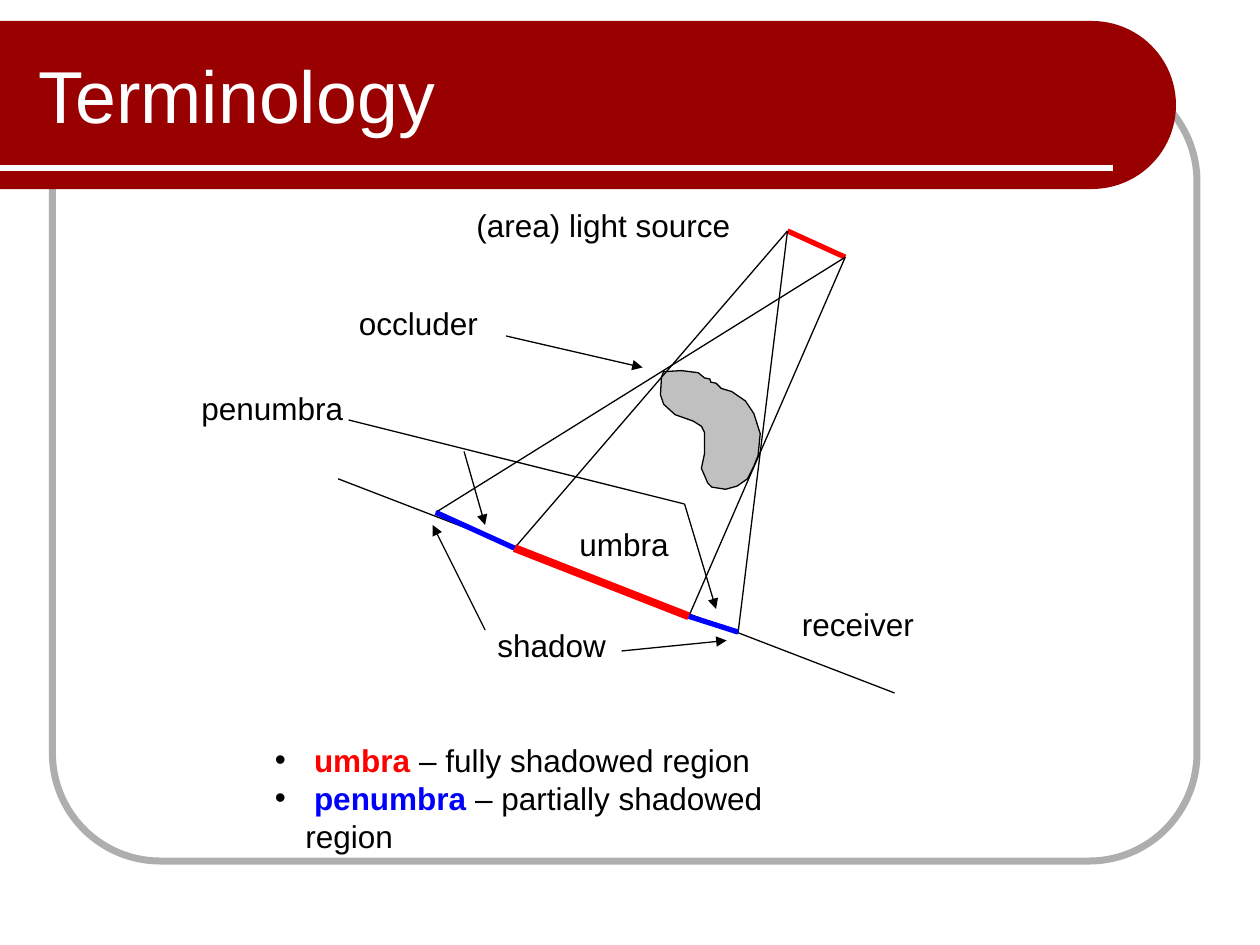
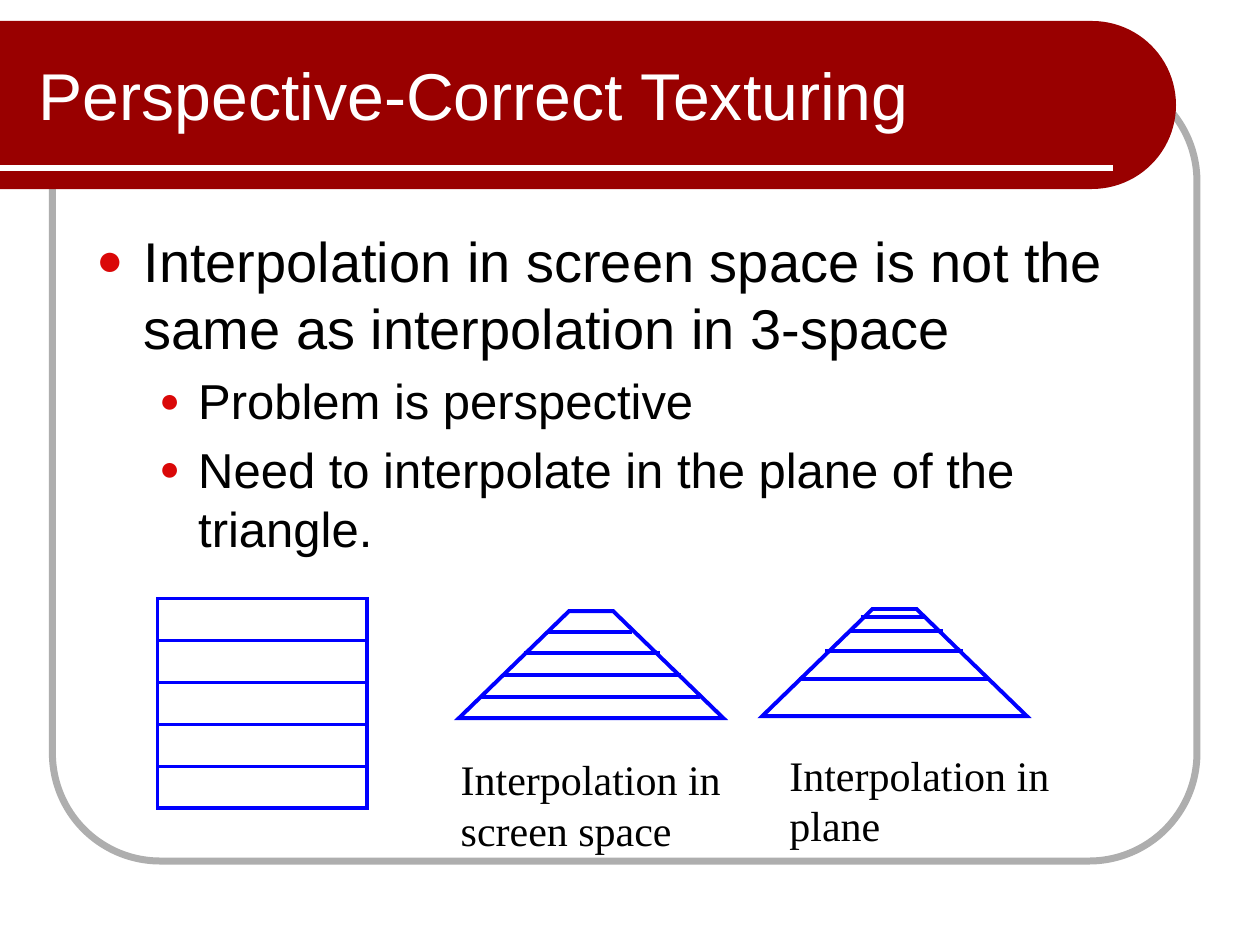
from dataclasses import dataclass
from math import cos, pi, sin

from lxml.etree import SubElement
from pptx import Presentation
from pptx.dml.color import RGBColor
from pptx.enum.shapes import MSO_CONNECTOR as Link, MSO_SHAPE as Preset
from pptx.enum.text import MSO_ANCHOR as Anchor, MSO_AUTO_SIZE as Fit
from pptx.oxml.ns import qn
from pptx.util import Emu, Pt

PX = 7620  # 120 px to the inch
WIDTH, HEIGHT = 1200, 900


@dataclass(frozen=True)
class Theme:
    band: str = "990000"
    frame: str = "AEAEAE"
    paper: str = "FFFFFF"
    ink: str = "000000"
    red: str = "FF0000"
    blue: str = "0000FF"
    grey: str = "C0C0C0"
    bullet: str = "DA0808"
    sans: str = "Arial"
    serif: str = "Times New Roman"
    label: float = 18
    caption: float = 24
    point: float = 32
    subpoint: float = 28
    thin: float = 0.75
    medium: float = 2.25
    thick: float = 3
    heavy: float = 4.5


def px(value):
    return Emu(round(value * PX))


class Painter:
    def __init__(self, deck, theme):
        self.deck, self.theme, self.page = deck, theme, None

    def new_page(self, title, size):
        """Start a page with its frame, title band and title."""
        t = self.theme
        self.page = self.deck.slides.add_slide(self.deck.slide_layouts[6])
        frame = self.shape(Preset.ROUNDED_RECTANGLE, 50, 70, 1090, 750,
                           line=t.frame, weight=4)
        frame.adjustments[0] = 0.137
        steps = 48
        angles = [pi * i / steps - pi / 2 for i in range(steps + 1)]
        arc = [(1040 + 80 * cos(a), 100 + 80 * sin(a)) for a in angles]
        self.polygon([(0, 20), *arc, (0, 180)], fill=t.band)
        self.line((0, 160), (1060, 160), t.paper, t.thick)
        box = self.box(25, 30, 935, 120, vertical_anchor=Anchor.MIDDLE)
        self.span(box.paragraphs[0], title, size=size, color=t.paper)

    # Shapes and lines
    def paint(self, shape, fill, line, weight):
        shape.shadow.inherit = False
        if fill:
            shape.fill.solid()
            shape.fill.fore_color.rgb = RGBColor.from_string(fill)
        else:
            shape.fill.background()
        if line:
            shape.line.color.rgb = RGBColor.from_string(line)
            shape.line.width = Pt(weight)
            SubElement(shape.line._get_or_add_ln(), qn("a:miter"), lim="800000")
        else:
            shape.line.fill.background()
        return shape

    def shape(self, preset, left, top, width, height, fill=None, line=None, weight=1):
        shape = self.page.shapes.add_shape(
            preset, px(left), px(top), px(width), px(height))
        return self.paint(shape, fill, line, weight)

    def polygon(self, points, fill=None, line=None, weight=1):
        first, *rest = [(px(x), px(y)) for x, y in points]
        outline = self.page.shapes.build_freeform(*first)
        outline.add_line_segments(rest, close=True)
        return self.paint(outline.convert_to_shape(), fill, line, weight)

    def line(self, start, end, color=None, weight=None, arrow=False):
        link = self.page.shapes.add_connector(
            Link.STRAIGHT, *[px(v) for v in (*start, *end)])
        link.line.color.rgb = RGBColor.from_string(color or self.theme.ink)
        link.line.width = Pt(weight or self.theme.thin)
        if arrow:
            SubElement(link.line._get_or_add_ln(), qn("a:tailEnd"), type="triangle")
        SubElement(link._element.spPr, qn("a:effectLst"))

    # Text
    def box(self, left, top, width, height, **formats):
        frame = self.page.shapes.add_textbox(
            px(left), px(top), px(width), px(height)).text_frame
        for name, value in {"word_wrap": True, **formats}.items():
            setattr(frame, name, value)
        return frame

    def para(self, box, first, **formats):
        para = box.paragraphs[0] if first else box.add_paragraph()
        for name, value in formats.items():
            if not (first and name == "space_before"):
                setattr(para, name, value)
        return para

    def span(self, para, text, color=None, **formats):
        span = para.add_run()
        span.text = text
        formats = {"name": self.theme.sans, "size": self.theme.label, **formats}
        formats["size"] = Pt(formats["size"])
        for name, value in formats.items():
            setattr(span.font, name, value)
        span.font.color.rgb = RGBColor.from_string(color or self.theme.ink)

    def bullet(self, para, char, margin, hang, color=None, percent=100):
        props = para._p.get_or_add_pPr()
        props.set("marL", str(px(margin)))
        props.set("indent", str(-px(hang)))
        if color:
            SubElement(SubElement(props, qn("a:buClr")), qn("a:srgbClr"), val=color)
        SubElement(props, qn("a:buSzPct"), val=str(percent * 1000))
        SubElement(props, qn("a:buFont"), typeface=self.theme.sans)
        SubElement(props, qn("a:buChar"), char=char)

    def label(self, text, left, top, width):
        box = self.box(left, top, width, 48, word_wrap=False,
                       auto_size=Fit.SHAPE_TO_FIT_TEXT)
        self.span(box.paragraphs[0], text)

    def caption(self, text, left, top):
        box = self.box(left, top, 299, 108)
        self.span(box.paragraphs[0], text, name=self.theme.serif,
                  size=self.theme.caption)

    def striped_trapezoid(self, left, top, rungs):
        style = {"line": self.theme.blue, "weight": self.theme.medium}
        corners = [(252, 102), (147, 0), (105, 0), (0, 102)]
        self.polygon([(left + x, top + y) for x, y in corners], **style)
        for start, end, y in rungs:
            self.line((left + start, top + y), (left + end, top + y),
                      self.theme.blue, self.theme.medium)


def draw_terminology(painter):
    t = painter.theme
    painter.new_page("Terminology", 42)

    # Occluder
    painter.polygon(
        [(632, 354), (649, 353), (665, 355), (671, 360), (676, 361), (677, 364),
         (682, 365), (687, 370), (697, 373), (710, 382), (718, 394), (724, 413),
         (722, 434), (718, 444), (712, 456), (702, 463), (691, 466), (678, 464),
         (674, 460), (668, 446), (671, 432), (671, 412), (668, 406), (660, 401),
         (643, 395), (632, 385), (629, 376), (630, 359)],
        fill=t.grey, line=t.ink, weight=t.thin)

    # Receiver, light source and rays
    light_left, light_right = (750, 220), (805, 245)
    shadow_left, umbra_left = (415, 488), (490, 522)
    umbra_right, shadow_right = (656, 587), (703, 602)
    painter.line((322, 456), (852, 660))
    painter.line(light_left, light_right, t.red, t.thick)
    for start, end in [(light_left, umbra_left), (light_left, shadow_right),
                       (light_right, shadow_left), (light_right, umbra_right)]:
        painter.line(start, end)

    # Shadow regions
    painter.line(umbra_left, umbra_right, t.red, t.heavy)
    painter.line(umbra_left, shadow_left, t.blue, t.thick)
    painter.line(umbra_right, shadow_right, t.blue, t.thick)

    # Labels and their arrows
    for label in [("(area) light source", 442, 190, 266), ("receiver", 752, 570, 139),
                  ("shadow", 462, 590, 127), ("occluder", 330, 284, 138),
                  ("umbra", 540, 494, 109), ("penumbra", 180, 365, 160)]:
        painter.label(*label)
    painter.line((332, 400), (652, 480))
    for start, end in [((462, 600), (412, 500)), ((592, 620), (692, 610)),
                       ((482, 320), (612, 350)), ((442, 430), (462, 500)),
                       ((652, 480), (682, 580))]:
        painter.line(start, end, arrow=True)

    # Definitions
    box = painter.box(250, 700, 562, 84)
    definitions = [("umbra", t.red, " – fully shadowed region"),
                   ("penumbra", t.blue, " – partially shadowed region")]
    for i, (term, color, meaning) in enumerate(definitions):
        para = painter.para(box, i == 0)
        painter.bullet(para, "•", 29, 29)
        painter.span(para, " ")
        painter.span(para, term, color, bold=True)
        painter.span(para, meaning)


def draw_texturing(painter):
    t = painter.theme
    painter.new_page("Perspective-Correct Texturing", 37.8)

    # Points
    box = painter.box(80, 210, 1040, 580)
    main, sub = (t.point, 45, 45, 80), (t.subpoint, 97, 37, 70)
    points = [
        ("Interpolation in screen space is not the same as interpolation in 3-space", main),
        ("Problem is perspective", sub),
        ("Need to interpolate in the plane of the triangle.", sub),
    ]
    for i, (text, (size, margin, hang, percent)) in enumerate(points):
        para = painter.para(box, i == 0, space_before=Pt(size * 0.2))
        painter.bullet(para, "●", margin, hang, t.bullet, percent)
        painter.span(para, text, size=size)

    # Striped square
    left, top, side, stripes = 150, 570, 200, 5
    painter.shape(Preset.RECTANGLE, left, top, side, side,
                  line=t.blue, weight=t.medium)
    for i in range(1, stripes):
        y = top + side * i // stripes
        painter.line((left, y), (left + side, y), t.blue, t.medium)

    # The square in perspective, striped in two ways
    painter.striped_trapezoid(726, 580, [(94, 154, 8), (83, 172, 21),
                                         (60, 191, 40), (35, 215, 67)])
    painter.striped_trapezoid(437, 582, [(84, 165, 20), (62, 192, 40),
                                         (42, 212, 61), (21, 230, 82)])
    painter.caption("Interpolation in screen space", 427, 712)
    painter.caption("Interpolation in plane", 740, 708)


def main():
    deck = Presentation()
    deck.slide_width, deck.slide_height = px(WIDTH), px(HEIGHT)
    painter = Painter(deck, Theme())
    draw_terminology(painter)
    draw_texturing(painter)
    deck.save("out.pptx")


if __name__ == "__main__":
    main()
